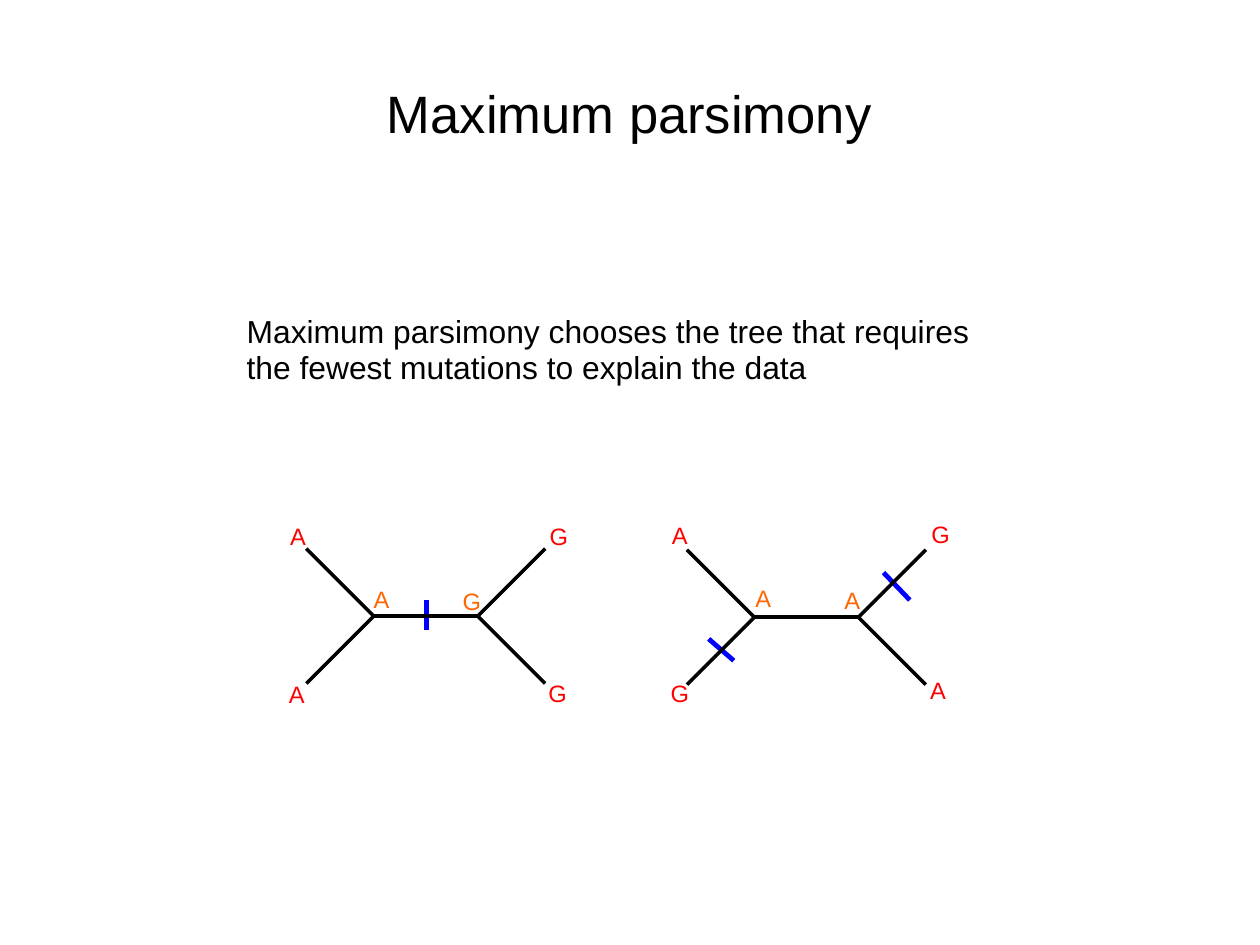
"""Build a slide comparing two parsimony trees."""
from dataclasses import dataclass

from lxml import etree
from pptx import Presentation
from pptx.dml.color import RGBColor
from pptx.enum import shapes, text
from pptx.oxml.ns import qn
from pptx.util import Cm, Inches, Pt


@dataclass(frozen=True)
class Theme:
    font: str = "Arial"
    ink: str = "000000"
    leaf: str = "FF0000"
    ancestor: str = "FF6600"
    mutation: str = "0000FF"
    title_size: float = 33.1
    body_size: float = 20
    label_size: float = 14.9
    branch_width: float = 2.25
    mutation_width: float = 3
    line_spacing: float = 0.93


THEME = Theme()
REACH = 0.59
TRUNK = 0.91
LABEL_WIDTHS = {"A": 0.34, "G": 0.36}
LABEL_HEIGHT = 0.33


def add_text(page, words, left, top, width, height, size, color=THEME.ink, wrap=True):
    box = page.shapes.add_textbox(Inches(left), Inches(top), Inches(width), Inches(height))
    box.text_frame.word_wrap = wrap
    para = box.text_frame.paragraphs[0]
    para.text = words
    para.line_spacing = THEME.line_spacing
    para.font.name = THEME.font
    para.font.size = Pt(size)
    para.font.color.rgb = RGBColor.from_string(color)
    return box


def add_title(page, words):
    frame = add_text(page, words, 0.55, 0.33, 9.91, 1.37, THEME.title_size).text_frame
    frame.margin_left = frame.margin_right = frame.margin_top = frame.margin_bottom = 0
    frame.vertical_anchor = text.MSO_ANCHOR.MIDDLE
    frame.paragraphs[0].alignment = text.PP_ALIGN.CENTER


def add_line(page, start, end, color, width):
    ends = [Inches(value) for value in (*start, *end)]
    line = page.shapes.add_connector(shapes.MSO_CONNECTOR.STRAIGHT, *ends)
    line.line.color.rgb = RGBColor.from_string(color)
    line.line.width = Pt(width)
    etree.SubElement(line._element.spPr, qn("a:effectLst"))


def add_labels(page, labels, color):
    for base, left, top in labels:
        add_text(page, base, left, top, LABEL_WIDTHS[base], LABEL_HEIGHT,
                 THEME.label_size, color, wrap=False)


def add_tree(page, left, middle, mutations, leaves, ancestors):
    for start, end in mutations:
        add_line(page, start, end, THEME.mutation, THEME.mutation_width)
    right = left + TRUNK
    branches = [((left, middle), (right, middle))]
    for node, side in ((left, -1), (right, 1)):
        for rise in (-1, 1):
            tip = (node + side * REACH, middle + rise * REACH)
            branches.append(((node, middle), tip))
    for start, end in branches:
        add_line(page, start, end, THEME.ink, THEME.branch_width)
    add_labels(page, leaves, THEME.leaf)
    add_labels(page, ancestors, THEME.ancestor)


def main():
    deck = Presentation()
    deck.slide_width, deck.slide_height = Cm(28), Cm(21)
    page = deck.slides.add_slide(deck.slide_layouts[6])
    add_title(page, "Maximum parsimony")
    add_text(page, "Maximum parsimony chooses the tree that requires the fewest "
             "mutations to explain the data", 2.06, 2.71, 6.73, 0.7, THEME.body_size)
    add_tree(
        page, 3.27, 5.39,
        mutations=[((3.73, 5.25), (3.73, 5.51))],
        leaves=[("A", 2.44, 4.54), ("A", 2.43, 5.92), ("G", 4.71, 4.54), ("G", 4.7, 5.91)],
        ancestors=[("A", 3.17, 5.09), ("G", 3.95, 5.11)],
    )
    add_tree(
        page, 6.6, 5.4,
        mutations=[((6.2, 5.59), (6.42, 5.78)), ((7.73, 5.01), (7.96, 5.25))],
        leaves=[("A", 5.78, 4.53), ("G", 5.77, 5.91), ("G", 8.05, 4.52), ("A", 8.04, 5.89)],
        ancestors=[("A", 6.51, 5.08), ("A", 7.29, 5.1)],
    )
    deck.save("out.pptx")


if __name__ == "__main__":
    main()
